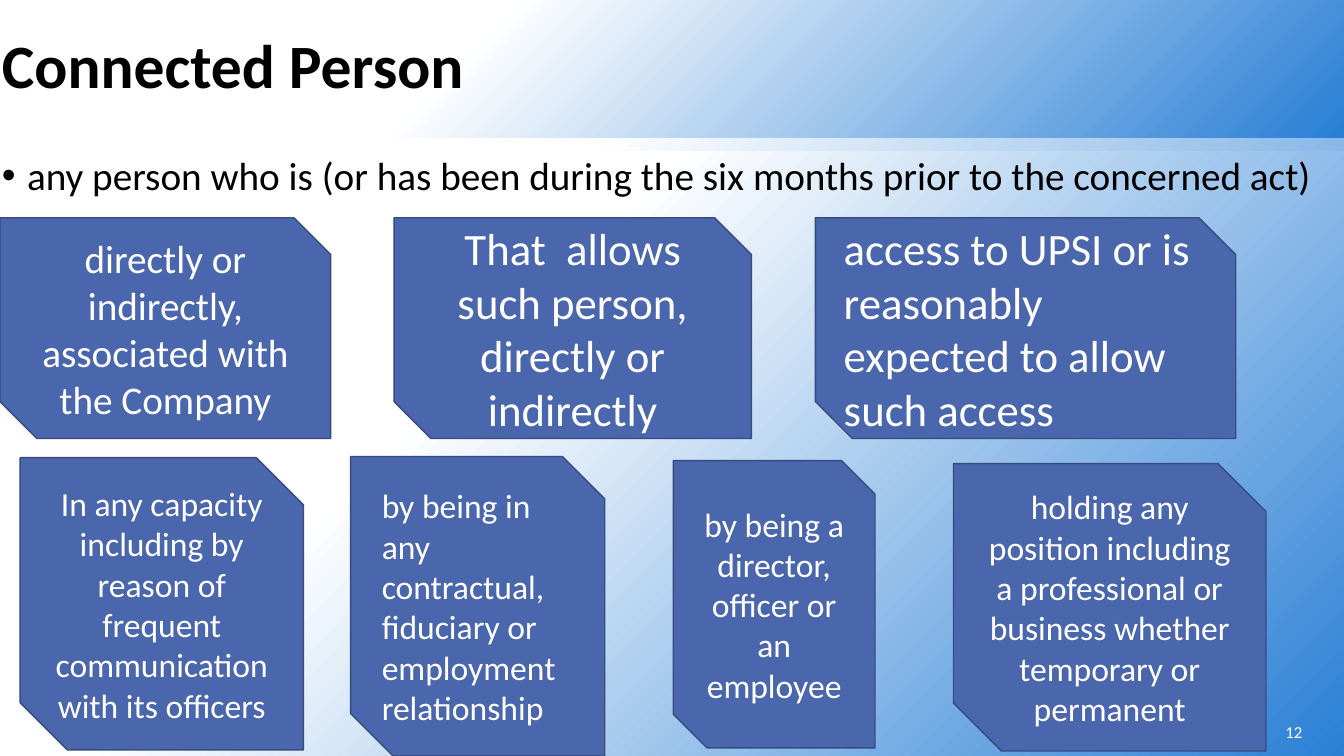
from dataclasses import dataclass

from lxml import etree
from pptx import Presentation
from pptx.dml.color import RGBColor
from pptx.dml.fill import FillFormat
from pptx.enum.shapes import MSO_SHAPE as SHAPE
from pptx.enum.text import MSO_ANCHOR as ANCHOR, PP_ALIGN as ALIGN
from pptx.oxml.ns import qn
from pptx.shapes.autoshape import Shape
from pptx.slide import Slide
from pptx.util import Pt

SLIDE_W, SLIDE_H = 960, 540
BAND_X, BAND_W = -5.76, 965.52
TOP_Y, TOP_H = 155.5, 157.7
WHITE, BLACK, SKY, INDIGO, NAVY = "FFFFFF", "000000", "297FD5", "4A66AC", "374B7F"


@dataclass
class Card:
    x: float
    y: float
    w: float
    h: float
    text: str
    size: float
    align: ALIGN = ALIGN.CENTER


CARDS = [
    Card(0, TOP_Y, 236.2, TOP_H, "directly or indirectly, associated with the Company", 28),
    Card(281.5, TOP_Y, 255.2, TOP_H, "That  allows such person, directly or indirectly", 32),
    Card(582.5, TOP_Y, 300.2, TOP_H,
         "access to UPSI or is reasonably expected to allow such access", 32, ALIGN.LEFT),
    Card(14.4, 326.9, 202.3, 208.8,
         "In any capacity including by reason of frequent communication with its officers", 24),
    Card(250.5, 326.1, 181.5, 213.9,
         "by being in any contractual, fiduciary or employment relationship", 24, ALIGN.LEFT),
    Card(481, 329, 144, 205.2, "by being a director, officer or an employee", 24),
    Card(681.1, 331.2, 223.2, 205.2,
         "holding any position including a professional or business whether temporary or permanent",
         24),
]


def rgb(value: str) -> RGBColor:
    return RGBColor.from_string(value)


def fill_gradient(fill: FillFormat) -> None:
    fill.gradient()
    fill.gradient_angle = 315
    for stop, position, color in zip(fill.gradient_stops, (0.35, 1), (WHITE, SKY)):
        stop.position = position
        stop.color.rgb = rgb(color)


def write(sp: Shape, text: str, size: float, color: str, align: ALIGN,
          anchor: ANCHOR = ANCHOR.MIDDLE, bold: bool = False) -> None:
    tf = sp.text_frame
    tf.word_wrap = True
    tf.vertical_anchor = anchor
    p = tf.paragraphs[0]
    p.alignment = align
    r = p.add_run()
    r.text = text
    r.font.name = "Calibri"
    r.font.size = Pt(size)
    r.font.bold = bold
    r.font.color.rgb = rgb(color)


def add_band(s: Slide, y: float, h: float) -> Shape:
    sp = s.shapes.add_shape(SHAPE.RECTANGLE, Pt(BAND_X), Pt(y), Pt(BAND_W), Pt(h))
    sp.shadow.inherit = False
    fill_gradient(sp.fill)
    sp.line.fill.background()
    sp.text_frame.paragraphs[0].line_spacing = 0.9
    return sp


def add_bullet(sp: Shape) -> None:
    p = sp.text_frame.paragraphs[0]
    p.space_before = Pt(10)
    pPr = p._p.get_or_add_pPr()
    pPr.set("marL", str(Pt(18)))
    pPr.set("indent", str(Pt(-18)))
    etree.SubElement(pPr, qn("a:buFont")).set("typeface", "Arial")
    etree.SubElement(pPr, qn("a:buChar")).set("char", "•")


def add_card(s: Slide, card: Card) -> None:
    sp = s.shapes.add_shape(SHAPE.SNIP_2_DIAG_RECTANGLE,
                            Pt(card.x), Pt(card.y), Pt(card.w), Pt(card.h))
    sp.shadow.inherit = False
    sp.fill.solid()
    sp.fill.fore_color.rgb = rgb(INDIGO)
    sp.line.color.rgb = rgb(NAVY)
    sp.line.width = Pt(1)
    write(sp, card.text, card.size, WHITE, card.align)


def main() -> None:
    prs = Presentation()
    prs.slide_width, prs.slide_height = Pt(SLIDE_W), Pt(SLIDE_H)
    s = prs.slides.add_slide(prs.slide_layouts[6])
    fill_gradient(s.background.fill)

    title = add_band(s, 0, 98.6)
    write(title, "Connected Person", 44, BLACK, ALIGN.LEFT, bold=True)

    body = add_band(s, 108, 438.5)
    write(body, "any person who is (or has been during the six months prior to the concerned act)",
          28, BLACK, ALIGN.LEFT, ANCHOR.TOP)
    add_bullet(body)

    for card in CARDS:
        add_card(s, card)

    number = s.shapes.add_textbox(Pt(721.4), Pt(508.3), Pt(216), Pt(28.8))
    write(number, "12", 12, WHITE, ALIGN.RIGHT)

    prs.save("out.pptx")


if __name__ == "__main__":
    main()
